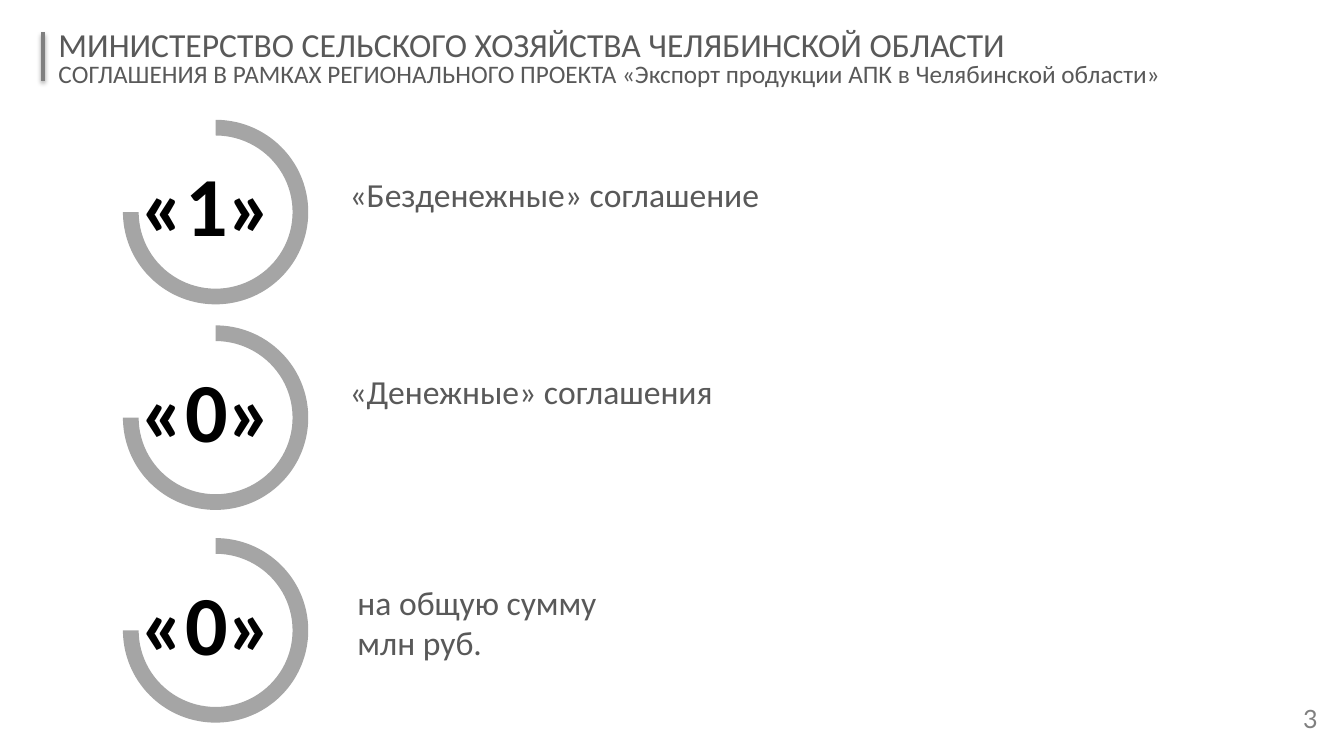
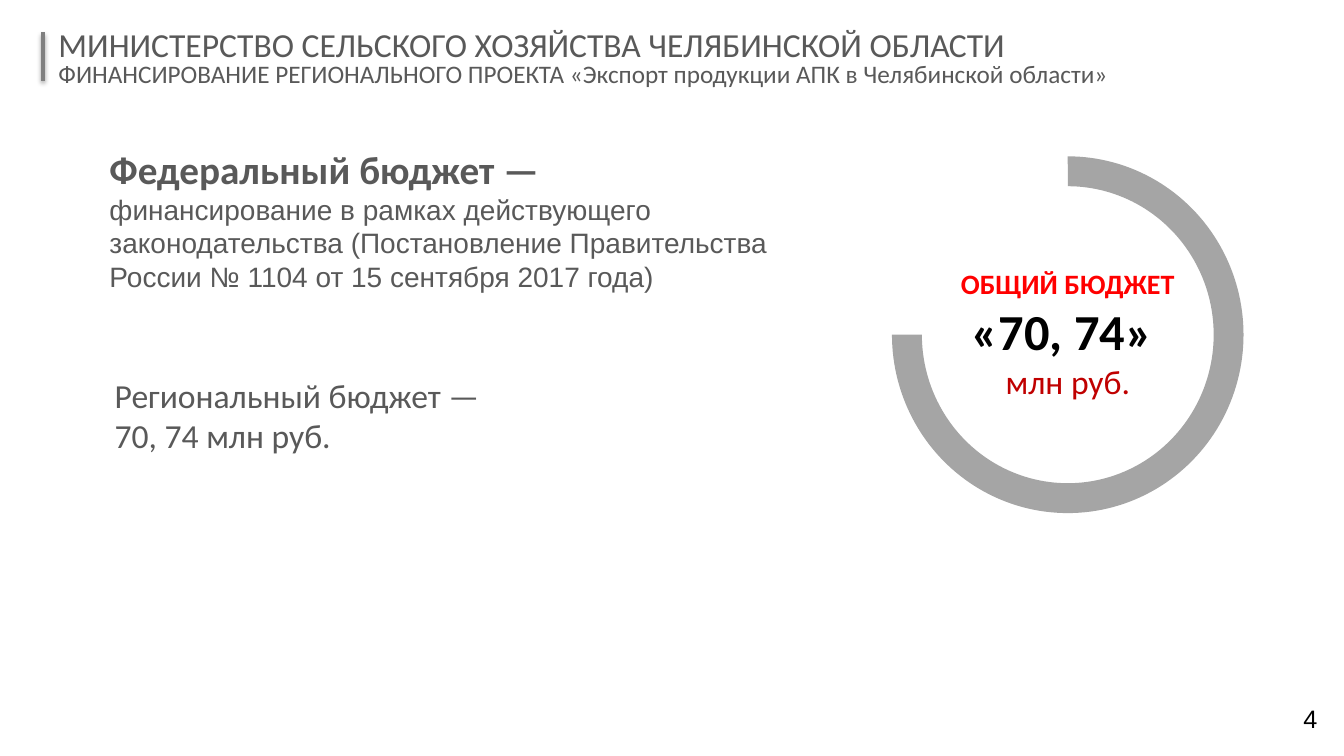
from lxml import etree
from pptx import Presentation
from pptx.dml.color import RGBColor as Rgb
from pptx.enum.shapes import MSO_CONNECTOR as Link, MSO_SHAPE as Shape
from pptx.enum.text import MSO_ANCHOR as Anchor, MSO_AUTO_SIZE as Fit, PP_ALIGN as Align
from pptx.oxml.ns import qn
from pptx.util import Cm, Pt

HUES = {
    "text": "595959",
    "bar": "808080",
    "ring": "A5A5A5",
    "black": "000000",
    "red": "FF0000",
    "wine": "C00000",
}
FONT = "Calibri"
HEAD = "МИНИСТЕРСТВО СЕЛЬСКОГО ХОЗЯЙСТВА ЧЕЛЯБИНСКОЙ ОБЛАСТИ"
PLAN = "РЕГИОНАЛЬНОГО ПРОЕКТА «Экспорт продукции АПК в Челябинской области»"


def hue(key):
    return Rgb.from_string(HUES[key])


def span(box):
    return [Cm(side) for side in box]


def line(text, size=24, tone="text", bold=False, font=FONT):
    return text, size, tone, bold, font


def write(frame, lines, align=Align.LEFT, anchor=Anchor.TOP, space=None):
    frame.word_wrap = True
    frame.auto_size = Fit.NONE
    frame.vertical_anchor = anchor
    for index, (text, size, tone, bold, font) in enumerate(lines):
        para = frame.add_paragraph() if index else frame.paragraphs[0]
        para.alignment = align
        if space:
            para.line_spacing = space
        run = para.add_run()
        run.text = text
        run.font.size = Pt(size)
        run.font.name = font
        run.font.bold = bold
        run.font.color.rgb = hue(tone)


def label(slide, box, lines, **style):
    write(slide.shapes.add_textbox(*span(box)).text_frame, lines, **style)


def shade(bar):
    props = bar.element.spPr
    list_tag = etree.SubElement(props, qn("a:effectLst"))
    cast = etree.SubElement(list_tag, qn("a:outerShdw"), blurRad="40000",
                            dist="23000", dir="5400000", rotWithShape="0")
    tint = etree.SubElement(cast, qn("a:srgbClr"), val=HUES["black"])
    etree.SubElement(tint, qn("a:alpha"), val="35000")


def header(slide, box, topic):
    left, top, width, height = box
    x = left - 0.13
    bar = slide.shapes.add_connector(
        Link.STRAIGHT, *span((x, top + 0.15, x, top + 1.37)))
    bar.line.color.rgb = hue("bar")
    bar.line.width = Pt(3)
    shade(bar)
    title = slide.shapes.title
    title.left, title.top, title.width, title.height = span(box)
    write(title.text_frame, [line(HEAD), line(topic, 18)],
          anchor=Anchor.MIDDLE, space=0.8)


def footer(slide, box, number, tone, font):
    label(slide, box, [line(number, 18, tone, font=font)],
          align=Align.CENTER, anchor=Anchor.MIDDLE, space=0.8)


def ring(slide, box):
    arc = slide.shapes.add_shape(Shape.BLOCK_ARC, *span(box))
    arc.adjustments[0] = 162
    arc.adjustments[1] = 108
    arc.adjustments[2] = 0.085
    arc.shadow.inherit = False
    arc.fill.solid()
    arc.fill.fore_color.rgb = hue("ring")
    arc.line.fill.background()


def count(slide, box, value, lines, shift):
    left, top, width, height = box
    label(slide, (left - 0.76, top + 0.71, width + 1.55, 2.79),
          [line(value, 60, "black", True)], align=Align.CENTER, anchor=Anchor.MIDDLE)
    ring(slide, box)
    right, down = shift
    label(slide, (left + right, top + down, 14.35, 1.27 * len(lines)),
          [line(text) for text in lines], align=Align.JUSTIFY)


def total(slide, box):
    left, top, width, height = box
    ring(slide, box)
    label(slide, (left + 0.43, top + 2.66, width - 0.86, 3.63), [
        line("ОБЩИЙ БЮДЖЕТ", 20, "red", True),
        line("«70, 74» ", 36, "black", True),
        line("млн руб.", 24, "wine"),
    ], align=Align.CENTER, anchor=Anchor.MIDDLE)


def budget(slide, box):
    left, top, width, height = box
    label(slide, (left, top, width, 5.21), [
        line("Федеральный бюджет —", 28, bold=True),
        line("финансирование в рамках действующего законодательства "
             "(Постановление Правительства России № 1104 от 15 сентября 2017 года)",
             20, font="Arial"),
    ])
    label(slide, (left + 0.13, top + 5.79, 14.35, 2.79),
          [line("Региональный бюджет —"), line("70, 74 млн руб.")],
          align=Align.JUSTIFY)


def start(deck, topic, number, tone, font):
    slide = deck.slides.add_slide(deck.slide_layouts[5])
    header(slide, (1.22, 0.66, 32.6, 1.7), f"{topic} {PLAN}")
    footer(slide, (32.2, 17.53, 1.65, 1.27), number, tone, font)
    return slide


def main():
    deck = Presentation()
    deck.slide_width, deck.slide_height = Cm(33.87), Cm(19.05)

    deals = start(deck, "СОГЛАШЕНИЯ В РАМКАХ", "3", "bar", "Lato")
    rows = [
        (3.02, "«1» ", ["«Безденежные» соглашение"], (5.46, 1.25)),
        (8.2, "«0» ", ["«Денежные» соглашения"], (5.46, 1.02)),
        (13.56, "«0» ", ["на общую сумму", "млн руб."], (5.66, 0.97)),
    ]
    for top, value, lines, shift in rows:
        count(deals, (3.1, top, 4.67, 4.65), value, lines, shift)

    funds = start(deck, "ФИНАНСИРОВАНИЕ", "4", "black", "Arial")
    budget(funds, (2.51, 3.53, 19.02, 8.58))
    total(funds, (22.48, 3.94, 8.86, 8.99))

    deck.save("out.pptx")


if __name__ == "__main__":
    main()
